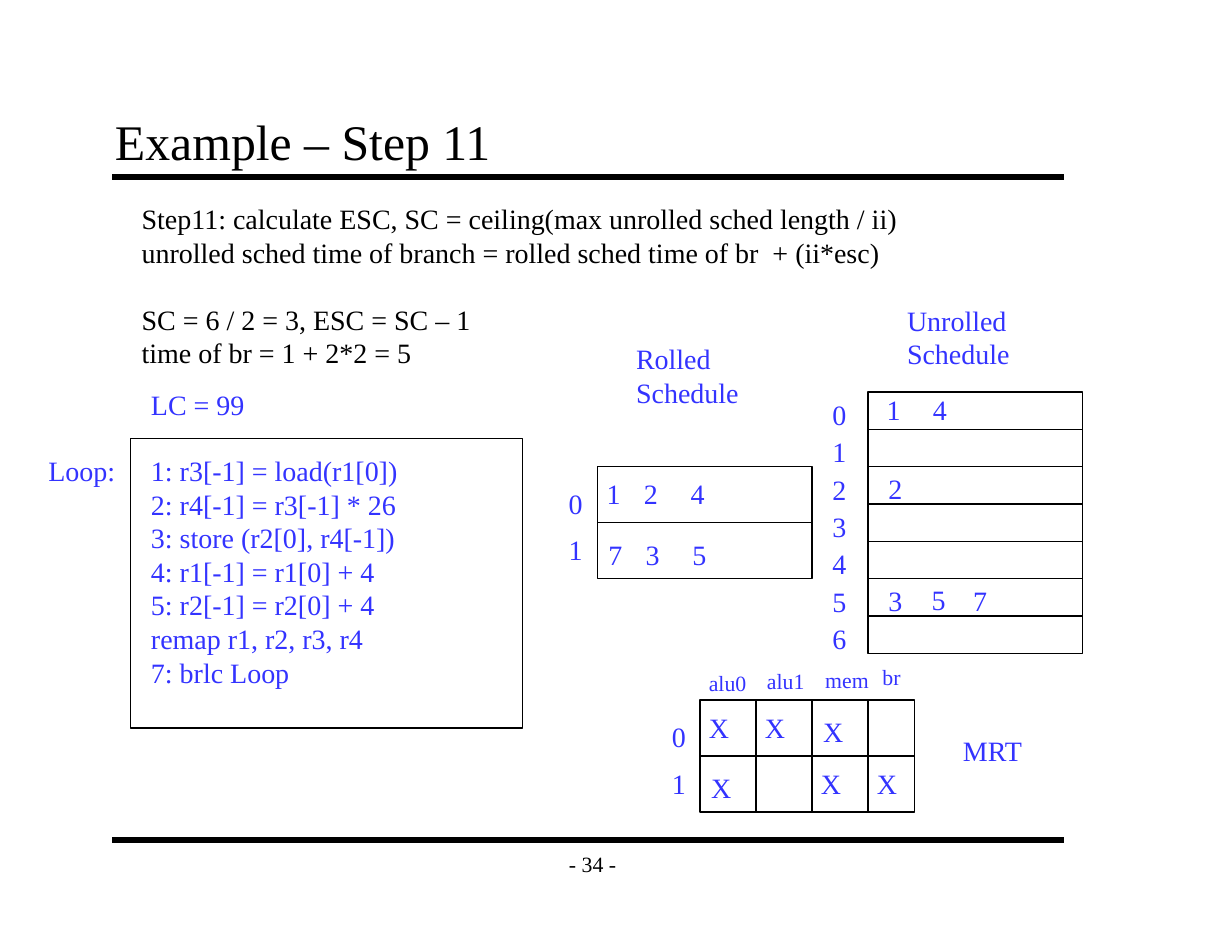
from pptx import Presentation
from pptx.dml.color import RGBColor
from pptx.enum.shapes import MSO_CONNECTOR, MSO_SHAPE
from pptx.enum.text import MSO_ANCHOR, PP_ALIGN
from pptx.oxml.ns import qn
from pptx.util import Pt
from lxml import etree

LINE, RECT = MSO_CONNECTOR.STRAIGHT, MSO_SHAPE.RECTANGLE
TOP, MID, BASE = MSO_ANCHOR.TOP, MSO_ANCHOR.MIDDLE, MSO_ANCHOR.BOTTOM
LEFT, MIDST = PP_ALIGN.LEFT, PP_ALIGN.CENTER
FONT = "Times New Roman"
HUES = {"ink": "000000", "blue": "3333FF"}

RULES = [114, 540]
STEPS = [
    "Step11: calculate ESC, SC = ceiling(max unrolled sched length / ii)",
    "unrolled sched time of branch = rolled sched time of br  + (ii*esc)",
    "SC = 6 / 2 = 3, ESC = SC – 1",
    "time of br = 1 + 2*2 = 5",
]
CODE = [
    "1: r3[-1] = load(r1[0])",
    "2: r4[-1] = r3[-1] * 26",
    "3: store (r2[0], r4[-1])",
    "4: r1[-1] = r1[0] + 4",
    "5: r2[-1] = r2[0] + 4",
    "remap r1, r2, r3, r4",
    "7: brlc Loop",
]
NOTES = [
    (CODE, 90, 288, 172.8),
    (["Loop:"], 24, 288, 57.6),
    (["LC = 99"], 90, 245.5, 74.9),
    (["MRT"], 612, 468, 53.3),
    (["Rolled", "Schedule"], 401.8, 216, 80.6),
    (["Unrolled", "Schedule"], 576, 191.5, 80.6),
]
UNITS = [("alu0", 448.6, 427, 38.9), ("alu1", 486, 425.5, 38.9),
         ("mem", 523.4, 424.8, 42.5), ("br", 560.2, 423.4, 25.9)]
GRIDS = [
    {"box": (384, 300, 138, 72), "rows": 2, "cols": [],
     "index": (358.5, 309, 30),
     "marks": [("1", 383, 303), ("2", 406.8, 303), ("4", 437, 303),
               ("7", 384, 342), ("3", 408, 342), ("5", 438, 342)]},
    {"box": (558, 252, 138, 168), "rows": 7, "cols": [],
     "index": (528, 252, 24),
     "marks": [("1", 563, 249), ("4", 592.6, 249), ("2", 564, 299.5),
               ("3", 564, 371.5), ("5", 591.8, 370.8), ("7", 618.5, 371.5)]},
    {"box": (450, 450, 138, 72), "rows": 2, "cols": [36, 72, 108],
     "index": (424.8, 459, 30),
     "marks": [("X", 448.6, 453), ("X", 484.6, 453), ("X", 522, 456),
               ("X", 450, 492), ("X", 520.6, 489), ("X", 556.6, 489)]},
]

deck = Presentation()
deck.slide_width, deck.slide_height = Pt(792), Pt(612)
slide = deck.slides.add_slide(deck.slide_layouts[6])
shapes = slide.shapes


def color(name):
    return RGBColor.from_string(HUES[name])


def write(lines, x, y, w, h=None, size=18, hue="blue", wrap=False,
          pad=(7.2, 3.6), anchor=TOP, align=LEFT):
    lead = size * 1.2
    box = shapes.add_textbox(Pt(x), Pt(y), Pt(w),
                             Pt(h or len(lines) * lead + 7.2))
    frame = box.text_frame
    frame.word_wrap, frame.vertical_anchor = wrap, anchor
    frame.margin_left = frame.margin_right = Pt(pad[0])
    frame.margin_top = frame.margin_bottom = Pt(pad[1])
    frame.text = "\n".join(lines)
    for para in frame.paragraphs:
        para.alignment, para.line_spacing = align, Pt(lead)
        font = para.font
        font.name, font.size = FONT, Pt(size)
        font.color.rgb = color(hue)
    return frame


def draw(x1, y1, x2, y2, width=1):
    line = shapes.add_connector(LINE, Pt(x1), Pt(y1), Pt(x2), Pt(y2))
    line.line.color.rgb, line.line.width = color("ink"), Pt(width)
    etree.SubElement(line._element.spPr, qn("a:effectLst"))
    return line


def frame_box(x, y, w, h):
    box = shapes.add_shape(RECT, Pt(x), Pt(y), Pt(w), Pt(h))
    box.shadow.inherit = False
    box.fill.background()
    box.line.color.rgb, box.line.width = color("ink"), Pt(1)
    return box


def grid(box, rows, cols, index, marks):
    x, y, w, h = box
    rect = frame_box(*box)
    for row in range(1, rows):
        level = y + row * h / rows
        line = draw(x, level, x + w, level)
        if row * 2 == rows:
            line.begin_connect(rect, 1)
            line.end_connect(rect, 3)
    for col in cols:
        draw(x + col, y, x + col, y + h)
    left, top, step = index
    for row in range(rows):
        write([str(row)], left, top + row * step, 23.8)
    for mark, left, top in marks:
        write([mark], left, top, 27.4 if mark == "X" else 23.8)


for level in RULES:
    draw(72, level, 684, level, 4)
write(["- 34 -"], 354, 540, 54, 30, 14, "ink", pad=(7.9, 4.3),
      anchor=MID, align=MIDST)
write(["Example – Step 11"], 66, 66, 612, 48, 32, "ink", wrap=True,
      pad=(7.9, 4.3), anchor=BASE)
steps = write(STEPS, 84, 126, 505.4, 116.6, hue="ink")
steps.paragraphs[2].space_before = Pt(21.6)
frame_box(84, 282, 252, 186)
for note in NOTES:
    write(*note)
for name, x, y, w in UNITS:
    write([name], x, y, w, size=14)
for spec in GRIDS:
    grid(**spec)

deck.save("out.pptx")
